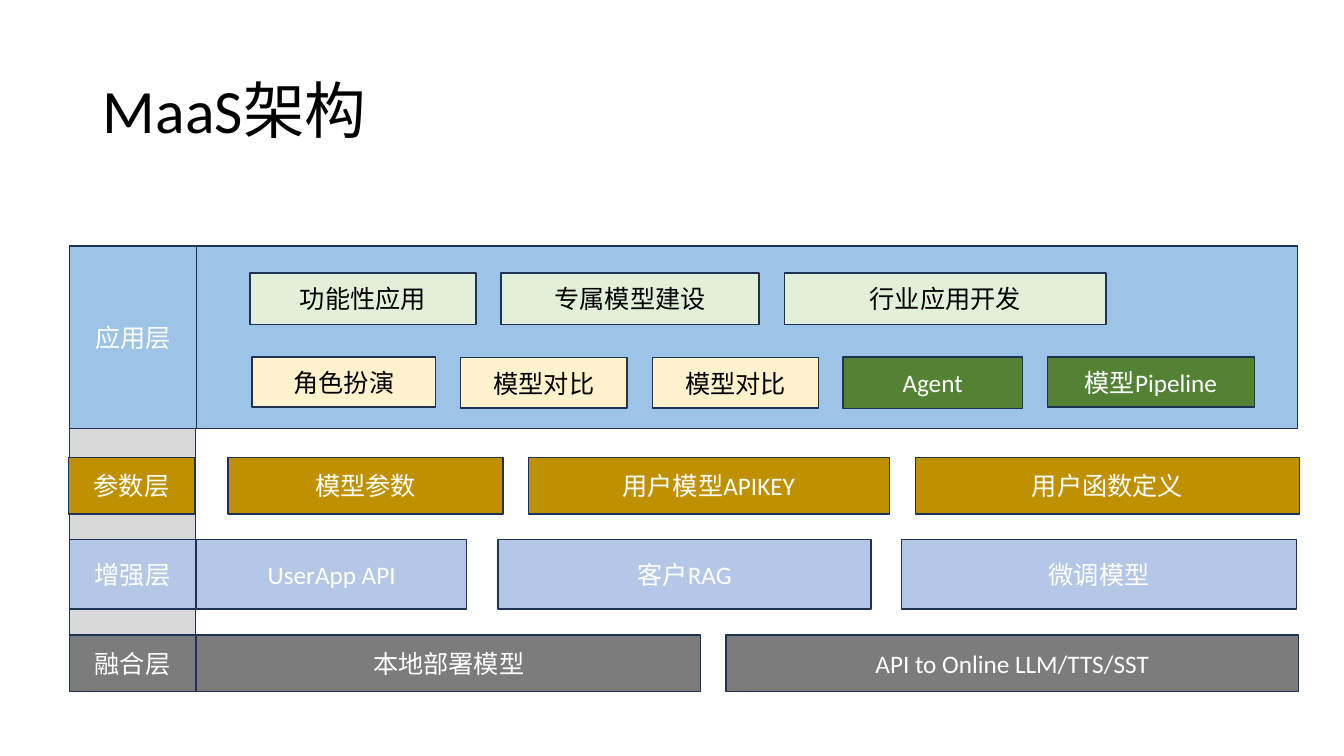
from pptx import Presentation
from pptx.dml.color import RGBColor as RGB
from pptx.enum.shapes import MSO_SHAPE as SHAPE
from pptx.enum.text import MSO_ANCHOR as ANCHOR, MSO_AUTO_SIZE as FIT, PP_ALIGN as ALIGN
from pptx.util import Pt

PX = 9144  # 100 px to the inch
HUES = {
    "sky": "9DC3E6", "mint": "E2F0D9", "cream": "FFF2CC", "green": "548235",
    "gold": "BF9000", "blue": "B4C7E7", "grey": "7C7C7C", "pale": "D9D9D9",
    "navy": "1E3256", "white": "FFFFFF", "black": "000000",
}


def hue(name):
    return RGB.from_string(HUES[name])


def write(frame, text, size=18, color="white", align=ALIGN.CENTER, lead=None):
    frame.word_wrap = True
    frame.auto_size = FIT.NONE
    frame.vertical_anchor = ANCHOR.MIDDLE
    para = frame.paragraphs[0]
    para.alignment = align
    para.line_spacing = lead
    run = para.add_run()
    run.text = text
    run.font.name = "Calibri"
    run.font.size = Pt(size)
    run.font.color.rgb = hue(color)


def box(x, y, w, h, fill, text="", color="white"):
    rect = slide.shapes.add_shape(SHAPE.RECTANGLE, x * PX, y * PX, w * PX, h * PX)
    rect.shadow.inherit = False
    rect.fill.solid()
    rect.fill.fore_color.rgb = hue(fill)
    rect.line.color.rgb = hue("navy")
    rect.line.width = Pt(1)
    if text:
        write(rect.text_frame, text, color=color)


deck = Presentation()
deck.slide_width, deck.slide_height = 1333 * PX, 750 * PX
slide = deck.slides.add_slide(deck.slide_layouts[5])

# Title
title = slide.shapes.title
title.left, title.top, title.width, title.height = 92 * PX, 40 * PX, 1150 * PX, 145 * PX
write(title.text_frame, "MaaS架构", size=44, color="black", align=ALIGN.LEFT, lead=0.9)

# Side column behind the layer names
box(69, 244, 125, 441, "pale")

# Layers: name, left, top, width, height, fill, items (left, width, text)
layers = [
    ("应用层", 69, 244, 126, 181, "sky", []),
    ("参数层", 68, 454, 125, 56, "gold",
     [(226, 273, "模型参数"), (524, 358, "用户模型APIKEY"), (908, 381, "用户函数定义")]),
    ("增强层", 69, 535, 125, 69, "blue",
     [(195, 268, "UserApp API"), (494, 370, "客户RAG"), (894, 392, "微调模型")]),
    ("融合层", 69, 630, 125, 56, "grey",
     [(195, 500, "本地部署模型"), (720, 568, "API to Online LLM/TTS/SST")]),
]
for name, left, top, wide, high, fill, items in layers:
    box(left, top, wide, high, fill, name)
    for x, w, text in items:
        box(x, top, w, high, fill, text)

# Application panel and its two rows
box(195, 244, 1092, 181, "sky")
for x, w, text in [(248, 224, "功能性应用"), (497, 256, "专属模型建设"), (778, 319, "行业应用开发")]:
    box(x, 271, w, 51, "mint", text, "black")

tools = [
    (250, 354, 182, 50, "cream", "角色扮演", "black"),
    (457, 355, 165, 50, "cream", "模型对比", "black"),
    (647, 355, 165, 50, "cream", "模型对比", "black"),
    (836, 354, 178, 51, "green", "Agent", "white"),
    (1039, 354, 205, 50, "green", "模型Pipeline", "white"),
]
for tool in tools:
    box(*tool)

deck.save("out.pptx")
